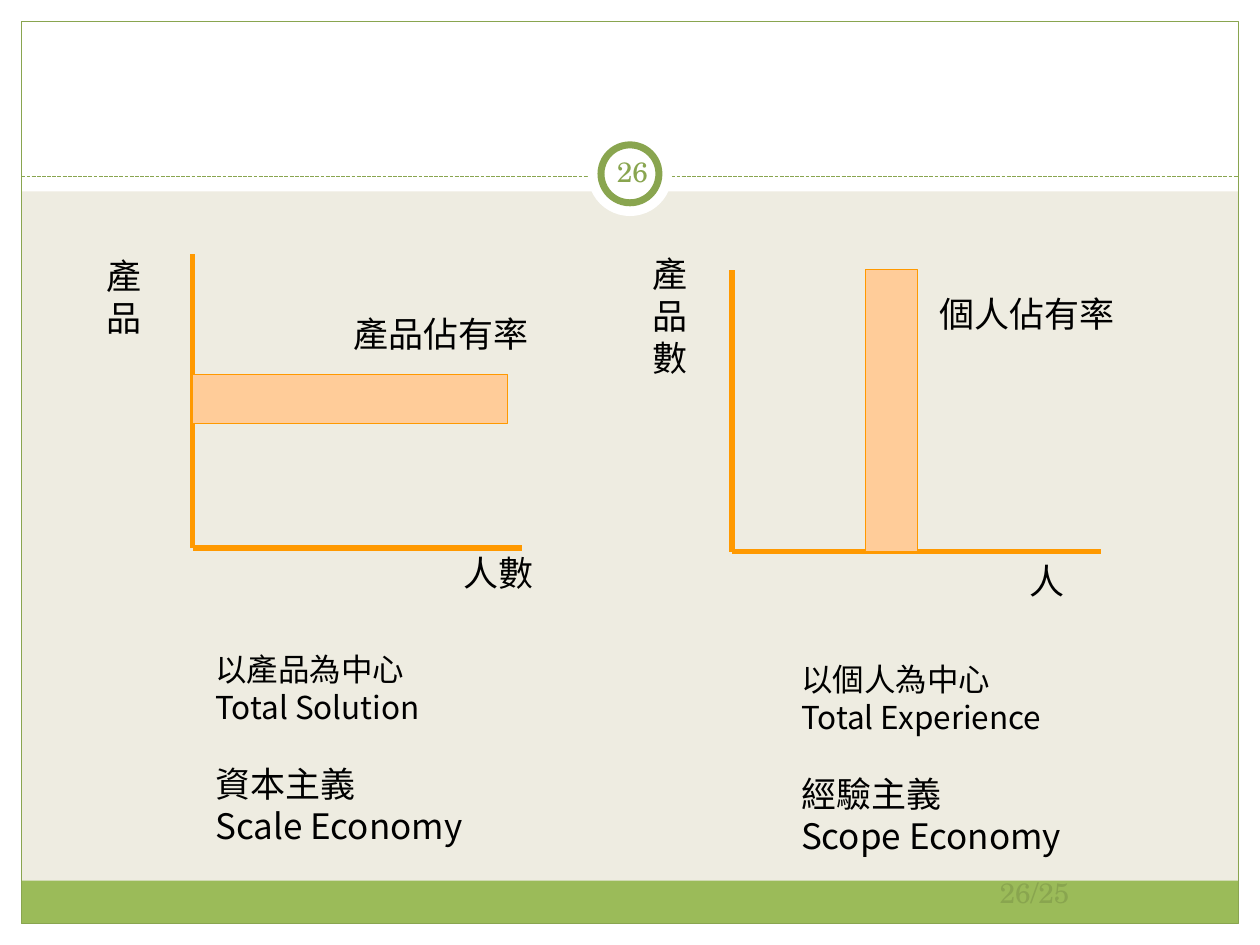
from lxml import etree
from pptx import Presentation
from pptx.dml.color import RGBColor
from pptx.enum.dml import MSO_LINE
from pptx.enum.shapes import MSO_CONNECTOR, MSO_SHAPE
from pptx.enum.text import MSO_ANCHOR, PP_ALIGN
from pptx.oxml.ns import qn
from pptx.util import Inches, Pt

RECTANGLE, OVAL = MSO_SHAPE.RECTANGLE, MSO_SHAPE.OVAL
STRAIGHT, DASH = MSO_CONNECTOR.STRAIGHT, MSO_LINE.SQUARE_DOT
MIDDLE, LEFT, CENTER = MSO_ANCHOR.MIDDLE, PP_ALIGN.LEFT, PP_ALIGN.CENTER

COLORS = {
    "paper": "EEECE1", "white": "FFFFFF", "band": "9BBB59", "frame": "89A54F",
    "axis": "FF9900", "bar": "FFCC99", "text": "000000",
}
BODY_FONT, NUMBER_FONT = "Noto Sans CJK SC", "TeX Gyre Schola"
WIDTH, HEIGHT, MARGIN = 10, 7.5, 0.17
HEADER, RULE, BAND = 1.52, 1.4, 0.34

PAGE_NUMBERS = [
    ("26", (4.77, 1.12, 0.5, 0.48)),
    ("26/25", (7.17, 6.83, 2.08, 0.5)),
]
CHARTS = [
    {
        "origin": (1.53, 4.35), "end": (4.14, 2.02),
        "bar": (1.53, 2.97, 2.5, 0.39),
        "labels": [
            (["產", "品"], (0.75, 1.94, 0.84, 0.83)),
            (["產品佔有率"], (2.71, 2.33, 1.7, 0.64)),
            (["人數"], (3.58, 4.22, 0.84, 0.64)),
        ],
        "caption": ["以產品為中心", "Total Solution", "資本主義", "Scale Economy"],
        "caption_at": (1.61, 4.93),
    },
    {
        "origin": (5.81, 4.38), "end": (8.74, 2.14),
        "bar": (6.87, 2.14, 0.41, 2.24),
        "labels": [
            (["產", "品", "數"], (5.08, 1.94, 0.94, 1.12)),
            (["個人佔有率"], (7.36, 2.17, 1.7, 0.64)),
            (["人"], (8.07, 4.3, 0.94, 0.61)),
        ],
        "caption": ["以個人為中心", "Total Experience", "經驗主義", "Scope Economy"],
        "caption_at": (6.26, 5.01),
    },
]
CAPTION_SIZE = (2.5, 2.02)
CAPTION_POINTS = [18, 18, 20, 20]
CAPTION_GAP = 21


def color(name):
    return RGBColor.from_string(COLORS[name])


def add_block(page, kind, box, fill=None, line=None, weight=0.75):
    block = page.shapes.add_shape(kind, *map(Inches, box))
    block.shadow.inherit = False
    if fill:
        block.fill.solid()
        block.fill.fore_color.rgb = color(fill)
    else:
        block.fill.background()
    if line:
        block.line.color.rgb = color(line)
        block.line.width = Pt(weight)
    else:
        block.line.fill.background()


def add_line(page, start, end, line, weight):
    connector = page.shapes.add_connector(STRAIGHT, *map(Inches, (*start, *end)))
    connector.line.color.rgb = color(line)
    connector.line.width = Pt(weight)
    etree.SubElement(connector.element.spPr, qn("a:effectLst"))
    return connector


def add_text(page, lines, box, sizes, font=BODY_FONT, ink="text", align=LEFT, inset=0.1):
    text_box = page.shapes.add_textbox(*map(Inches, box))
    frame = text_box.text_frame
    frame.word_wrap = True
    frame.vertical_anchor = MIDDLE
    frame.margin_left = frame.margin_right = Inches(inset)
    frame.margin_top = frame.margin_bottom = Inches(0.05)
    frame.text = "\n".join(lines)
    for paragraph, size in zip(frame.paragraphs, sizes):
        paragraph.alignment = align
        span = paragraph.runs[0]
        span.font.size = Pt(size)
        span.font.name = font
        span.font.color.rgb = color(ink)
        east_asian = etree.SubElement(span.font._element, qn("a:ea"))
        east_asian.set("typeface", font)
    return frame


def add_ring(page, diameter, line=None):
    left, top = WIDTH / 2 - diameter / 2, 1.38 - diameter / 2
    add_block(page, OVAL, (left, top, diameter, diameter), "white", line, 4)


def add_frame(page):
    inner_width, inner_height = WIDTH - 2 * MARGIN, HEIGHT - 2 * MARGIN
    bottom, right = HEIGHT - MARGIN, WIDTH - MARGIN
    for box in [
        (0, bottom, WIDTH, MARGIN), (0, 0, WIDTH, HEADER),
        (0, 0, MARGIN, HEIGHT), (right, 0, MARGIN, HEIGHT),
    ]:
        add_block(page, RECTANGLE, box, "white")
    add_block(page, RECTANGLE, (MARGIN, bottom - BAND, inner_width, BAND), "band")
    add_block(page, RECTANGLE, (MARGIN, MARGIN, inner_width, inner_height), line="frame")
    rule = add_line(page, (MARGIN, RULE), (right, RULE), "frame", 0.75)
    rule.line.dash_style = DASH
    add_ring(page, 0.67)
    add_ring(page, 0.46, "frame")
    for number, box in PAGE_NUMBERS:
        add_text(page, [number], box, [16], NUMBER_FONT, "frame", CENTER, 0.05)


def add_diagram(page, chart):
    (left, base), (right, top) = chart["origin"], chart["end"]
    for tip in [(right, base), (left, top)]:
        add_line(page, (left, base), tip, "axis", 3)
    add_block(page, RECTANGLE, chart["bar"], "bar", "axis")
    for lines, box in chart["labels"]:
        add_text(page, lines, box, [20] * len(lines))
    caption_box = (*chart["caption_at"], *CAPTION_SIZE)
    caption = add_text(page, chart["caption"], caption_box, CAPTION_POINTS)
    caption.paragraphs[2].space_before = Pt(CAPTION_GAP)


def main():
    deck = Presentation()
    deck.slide_width, deck.slide_height = Inches(WIDTH), Inches(HEIGHT)
    page = deck.slides.add_slide(deck.slide_layouts[6])
    page.background.fill.solid()
    page.background.fill.fore_color.rgb = color("paper")
    add_frame(page)
    for chart in CHARTS:
        add_diagram(page, chart)
    deck.save("out.pptx")


if __name__ == "__main__":
    main()
